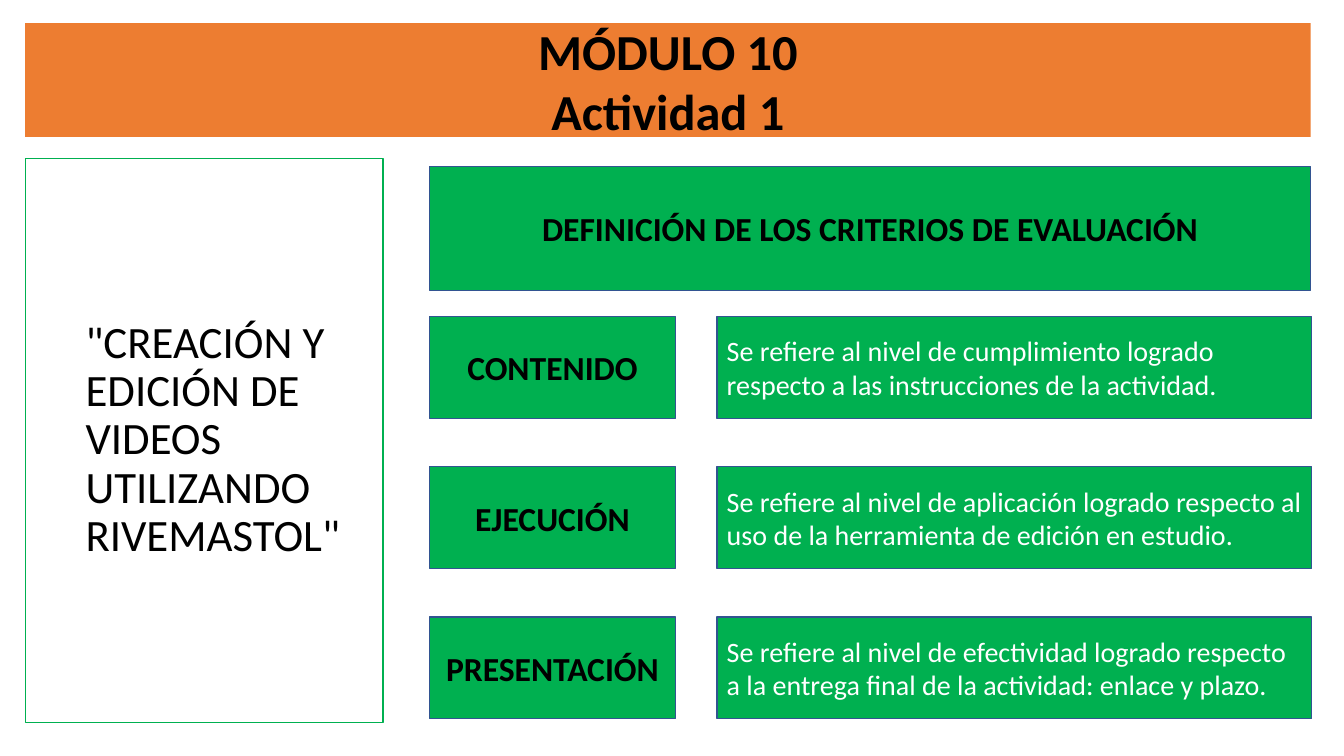
import pptx
import pptx.util
import pptx.dml.color
import pptx.enum.shapes
import pptx.enum.text
from dataclasses import dataclass

ALIGN = pptx.enum.text.PP_ALIGN
EMU_PER_PX = 9144


@dataclass(frozen=True)
class Theme:
    font: str = "Calibri"
    orange: str = "ED7D31"
    green: str = "00B050"
    border: str = "325491"
    dark: str = "000000"
    light: str = "FFFFFF"
    title_size: int = 36
    topic_size: int = 32
    heading_size: int = 24
    body_size: int = 20
    line_width: int = 1


def px(length):
    return pptx.util.Emu(length * EMU_PER_PX)


def rgb(value):
    return pptx.dml.color.RGBColor.from_string(value)


class SlideBuilder:
    def __init__(self, presentation, theme):
        self.theme = theme
        self.slide = presentation.slides.add_slide(presentation.slide_layouts[6])

    def box(self, bounds, fill=None, line=None):
        shape = self.slide.shapes.add_shape(
            pptx.enum.shapes.MSO_SHAPE.RECTANGLE, *map(px, bounds))
        shape.shadow.inherit = False
        if fill:
            shape.fill.solid()
            shape.fill.fore_color.rgb = rgb(fill)
        else:
            shape.fill.background()
        if line:
            shape.line.color.rgb = rgb(line)
            shape.line.width = pptx.util.Pt(self.theme.line_width)
        else:
            shape.line.fill.background()
        return shape

    def set_text(self, shape, lines, size, color, bold=False, indent=0, **paragraph_format):
        frame = shape.text_frame
        frame.word_wrap = True
        frame.vertical_anchor = pptx.enum.text.MSO_ANCHOR.MIDDLE
        frame.text = "\n".join(lines)
        font_format = {"name": self.theme.font, "size": pptx.util.Pt(size), "bold": bold}
        for paragraph in frame.paragraphs:
            for name, value in paragraph_format.items():
                setattr(paragraph, name, value)
            properties = paragraph._p.get_or_add_pPr()
            properties.set("marL", str(px(indent)))
            properties.set("indent", "0")
            font = paragraph.runs[0].font
            for name, value in font_format.items():
                setattr(font, name, value)
            font.color.rgb = rgb(color)

    def banner(self, bounds, lines):
        shape = self.box(bounds, fill=self.theme.orange)
        self.set_text(shape, lines, self.theme.title_size, self.theme.dark,
                      bold=True, alignment=ALIGN.CENTER)

    def topic(self, bounds, lines):
        shape = self.box(bounds, line=self.theme.green)
        self.set_text(shape, lines, self.theme.topic_size, self.theme.dark,
                      indent=50, alignment=ALIGN.LEFT, level=1, line_spacing=0.9)

    def heading(self, bounds, text):
        shape = self.box(bounds, self.theme.green, self.theme.border)
        self.set_text(shape, [text], self.theme.heading_size, self.theme.dark,
                      bold=True, alignment=ALIGN.CENTER)

    def description(self, bounds, text):
        shape = self.box(bounds, self.theme.green, self.theme.border)
        self.set_text(shape, [text], self.theme.body_size, self.theme.light,
                      alignment=ALIGN.LEFT)


CRITERIA = [
    ("CONTENIDO", "Se refiere al nivel de cumplimiento logrado respecto "
                  "a las instrucciones de la actividad."),
    ("EJECUCIÓN", "Se refiere al nivel de aplicación logrado respecto "
                  "al uso de la herramienta de edición en estudio."),
    ("PRESENTACIÓN", "Se refiere al nivel de efectividad logrado respecto "
                     "a la entrega final de la actividad: enlace y plazo."),
]
FIRST_ROW_TOP = 314
ROW_STEP = 149
ROW_HEIGHT = 101


def main():
    presentation = pptx.Presentation()
    presentation.slide_width = px(1333)
    presentation.slide_height = px(750)
    builder = SlideBuilder(presentation, Theme())

    builder.banner((25, 23, 1275, 113), ["MÓDULO 10", "Actividad 1"])
    builder.topic((25, 157, 355, 560),
                  ['"CREACIÓN Y', "EDICIÓN DE", "VIDEOS", "UTILIZANDO", 'RIVEMASTOL"'])
    builder.heading((426, 165, 874, 123), "DEFINICIÓN DE LOS CRITERIOS DE EVALUACIÓN")
    for row, (name, meaning) in enumerate(CRITERIA):
        top = FIRST_ROW_TOP + row * ROW_STEP
        builder.heading((426, top, 244, ROW_HEIGHT), name)
        builder.description((711, top, 590, ROW_HEIGHT), meaning)

    presentation.save("out.pptx")


if __name__ == "__main__":
    main()
